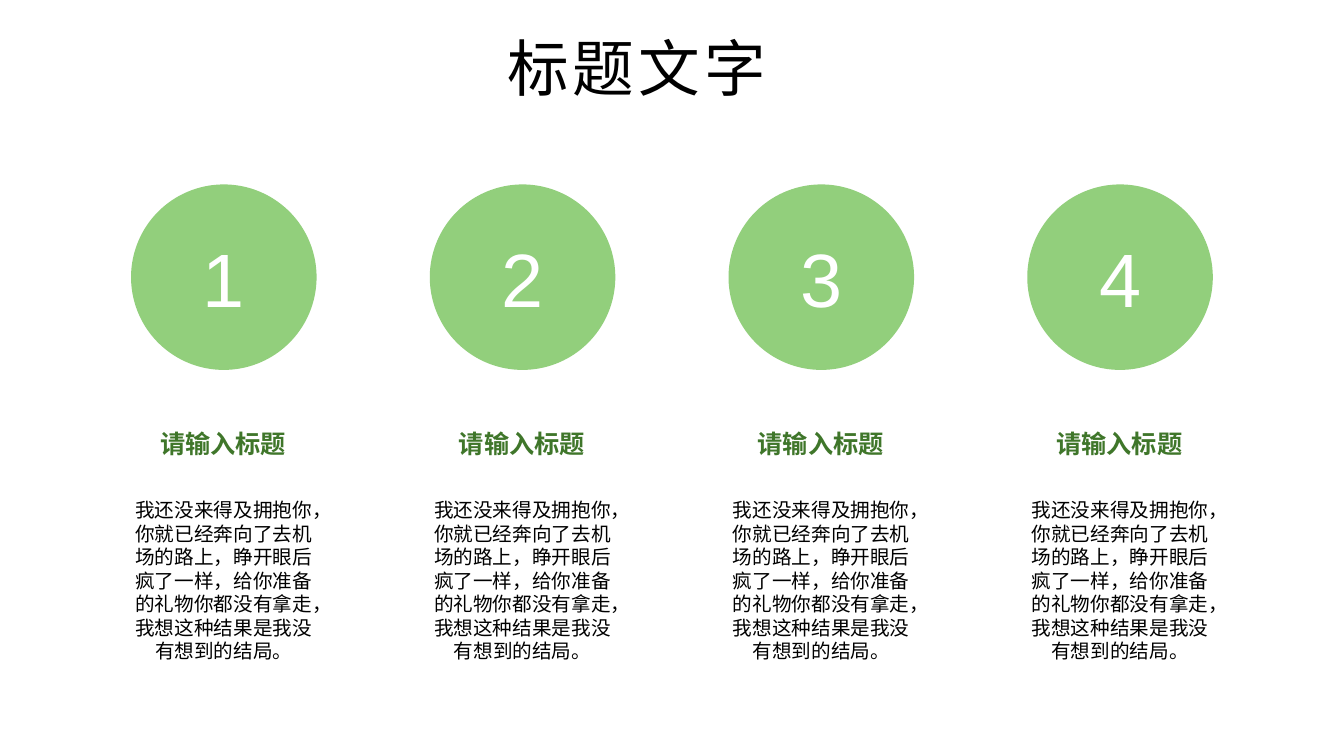
from pptx import Presentation
from pptx.dml.color import RGBColor as RGB
from pptx.enum.shapes import MSO_SHAPE as Shape
from pptx.enum.text import MSO_ANCHOR as Anchor, MSO_AUTO_SIZE as Fit, PP_ALIGN as Align
from pptx.oxml.ns import qn
from pptx.util import Inches, Pt

COLORS = {"circle": "92CF7C", "heading": "3F762A", "text": "000000", "number": "FFFFFF"}
LATIN, CJK = "Arial", "Noto Sans CJK JP"

# Four equal columns
COLUMNS = 4
FIRST_CENTER, COLUMN_STEP = 2.22, 2.963
HEADING = "请输入标题"
BODY = ("我还没来得及拥抱你，你就已经奔向了去机场的路上，睁开眼后疯了一样，"
        "给你准备的礼物你都没有拿走，我想这种结果是我没有想到的结局。")


def centered_box(center, top, width, height):
    return [Inches(v) for v in (center - width / 2, top, width, height)]


def write(tf, text, size, color, align=Align.CENTER, font=LATIN, bold=False):
    p = tf.paragraphs[0]
    p.alignment = align
    r = p.add_run()
    r.text = text
    r.font.name = font
    r.font.size = Pt(size)
    r.font.bold = bold
    r.font.color.rgb = RGB.from_string(COLORS[color])
    return r


def add_title(slide, text):
    title = slide.shapes.title
    title.left, title.top, title.width, title.height = centered_box(6.525, 0.25, 3.19, 0.84)
    tf = title.text_frame
    tf.vertical_anchor = Anchor.TOP
    tf.auto_size = Fit.SHAPE_TO_FIT_TEXT
    tf.word_wrap = True
    r = write(tf, text, 44, "text", Align.LEFT, CJK)
    # Letter spacing of three points
    r.font._element.set("spc", "300")
    ea = r.font._element.makeelement(qn("a:ea"), {"typeface": CJK})
    r.font._element.append(ea)


def add_number(slide, center, number):
    sp = slide.shapes.add_shape(Shape.OVAL, *centered_box(center, 1.83, 1.84, 1.84))
    sp.shadow.inherit = False
    sp.fill.solid()
    sp.fill.fore_color.rgb = RGB.from_string(COLORS["circle"])
    sp.line.fill.background()
    sp.text_frame.vertical_anchor = Anchor.MIDDLE
    write(sp.text_frame, str(number), 54, "number")


def add_text(slide, box, text, size, color, wrap=True, **style):
    tf = slide.shapes.add_textbox(*box).text_frame
    tf.word_wrap = wrap
    tf.auto_size = Fit.SHAPE_TO_FIT_TEXT
    write(tf, text, size, color, **style)


def main():
    prs = Presentation()
    prs.slide_width, prs.slide_height = Inches(13.33), Inches(7.5)
    slide = prs.slides.add_slide(prs.slide_layouts[5])
    add_title(slide, "标题文字")

    # Number, heading and paragraph of each column
    for i in range(COLUMNS):
        center = FIRST_CENTER + i * COLUMN_STEP
        add_number(slide, center, i + 1)
        add_text(slide, centered_box(center, 4.2, 1.46, 0.4), HEADING, 18, "heading",
                 wrap=False, align=Align.LEFT, bold=True)
        add_text(slide, centered_box(center, 4.89, 2.01, 1.75), BODY, 14, "text")

    prs.save("out.pptx")


if __name__ == "__main__":
    main()
